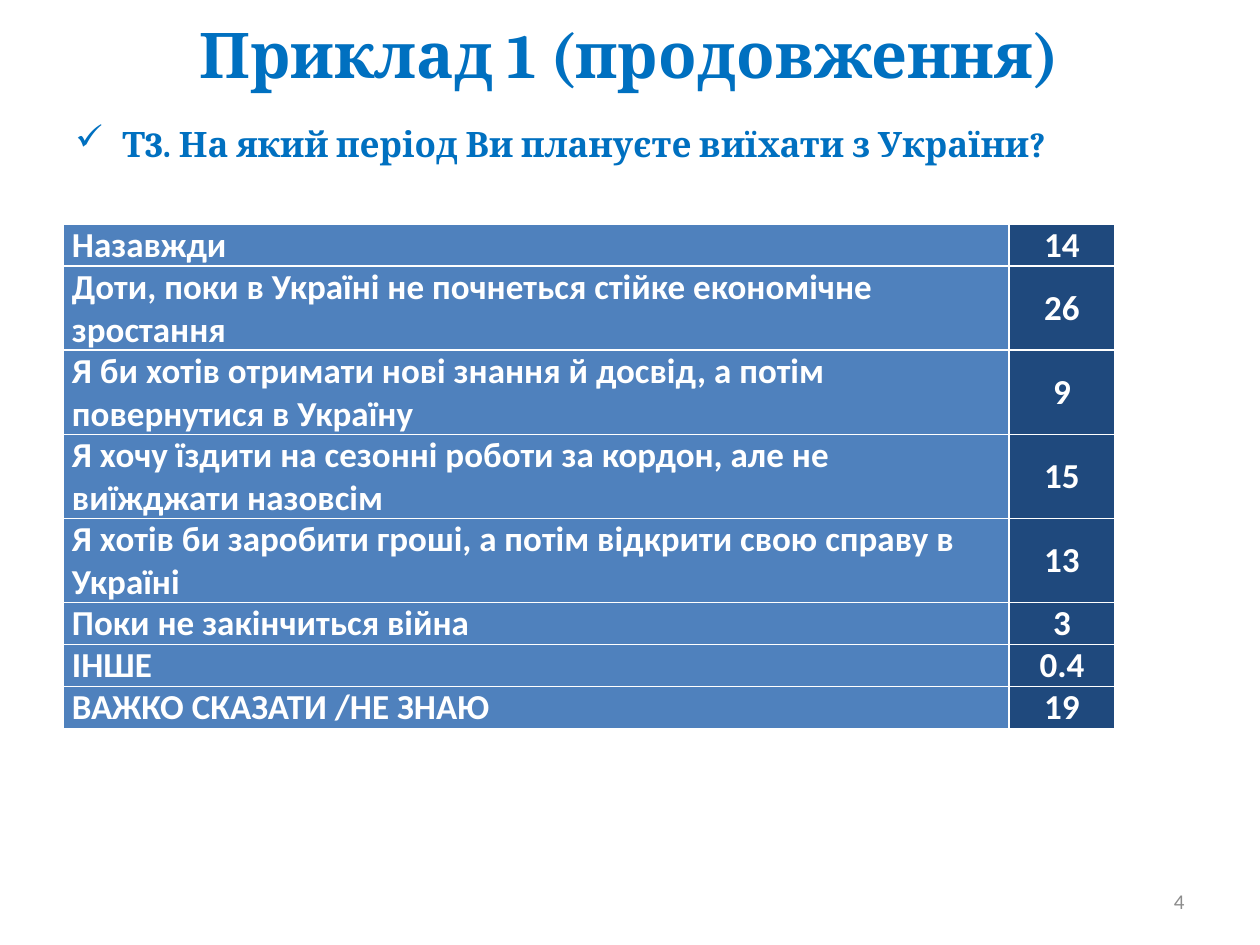
"""Build a slide with a survey question and a table of its answers."""
from lxml import etree
from pptx import Presentation
from pptx.dml.color import RGBColor
from pptx.enum.text import MSO_ANCHOR, PP_ALIGN
from pptx.oxml.ns import qn
from pptx.util import Emu, Pt

LEFT, CENTER, RIGHT = PP_ALIGN.LEFT, PP_ALIGN.CENTER, PP_ALIGN.RIGHT
TOP, MIDDLE = MSO_ANCHOR.TOP, MSO_ANCHOR.MIDDLE

BLUE = RGBColor(0x00, 0x70, 0xC0)
WHITE = RGBColor(0xFF, 0xFF, 0xFF)
GRAY = RGBColor(0x8C, 0x8C, 0x8C)
ANSWER_FILL = RGBColor(0x4F, 0x81, 0xBD)
SHARE_FILL = RGBColor(0x1F, 0x49, 0x7D)

TITLE = "Приклад 1 (продовження)"
QUESTION = "Т3. На який період Ви плануєте виїхати з України?"
PAGE_NUMBER = "4"
ANSWERS = [
    ("Назавжди", "14"),
    ("Доти, поки в Україні не почнеться стійке економічне зростання", "26"),
    ("Я би хотів отримати нові знання й досвід, а потім повернутися в Україну", "9"),
    ("Я хочу їздити на сезонні роботи за кордон, але не виїжджати назовсім", "15"),
    ("Я хотів би заробити гроші, а потім відкрити свою справу в Україні", "13"),
    ("Поки не закінчиться війна", "3"),
    ("ІНШЕ", "0.4"),
    ("ВАЖКО СКАЗАТИ /НЕ ЗНАЮ", "19"),
]
COLUMNS = [
    (946, ANSWER_FILL, LEFT, TOP),
    (106, SHARE_FILL, CENTER, MIDDLE),
]
ROW_HEIGHT = 42
CELL_INSET = 9
BULLET_INDENT = 47


def px(length):
    return Emu(round(length * 914400 / 126))


def write(frame, text, size, font, color, align=LEFT, bold=True):
    para = frame.paragraphs[0]
    para.alignment = align
    span = para.add_run()
    span.text = text
    span.font.size = Pt(size)
    span.font.name = font
    span.font.bold = bold
    span.font.color.rgb = color
    return para


def add_text_box(page, left, top, width, height, anchor):
    box = page.shapes.add_textbox(px(left), px(top), px(width), px(height))
    frame = box.text_frame
    frame.word_wrap = True
    frame.vertical_anchor = anchor
    return frame


def add_title(page):
    title = page.shapes.title
    title.left, title.top, title.width, title.height = px(113), px(0), px(1032), px(106)
    title.text_frame.vertical_anchor = MIDDLE
    write(title.text_frame, TITLE, 36, "Cambria", BLUE, CENTER)


def add_question(page):
    frame = add_text_box(page, 63, 116, 1134, 728, TOP)
    para = write(frame, QUESTION, 20, "Cambria", BLUE)
    properties = para._p.get_or_add_pPr()
    properties.set("marL", str(px(BULLET_INDENT)))
    properties.set("indent", str(-px(BULLET_INDENT)))
    etree.SubElement(properties, qn("a:buChar")).set("char", "✓")


def add_answers(page):
    width = sum(column[0] for column in COLUMNS)
    table = page.shapes.add_table(
        len(ANSWERS), len(COLUMNS), px(63), px(224), px(width), px(ROW_HEIGHT * len(ANSWERS))
    ).table
    table.horz_banding = False
    for column, (column_width, fill, align, anchor) in enumerate(COLUMNS):
        table.columns[column].width = px(column_width)
        for row, answer in enumerate(ANSWERS):
            cell = table.cell(row, column)
            cell.margin_left = cell.margin_right = px(CELL_INSET)
            cell.margin_top = cell.margin_bottom = 0
            cell.vertical_anchor = anchor
            cell.fill.solid()
            cell.fill.fore_color.rgb = fill
            write(cell.text_frame, answer[column], 20, "Calibri", WHITE, align)


def main():
    deck = Presentation()
    deck.slide_width, deck.slide_height = px(1260), px(945)
    page = deck.slides.add_slide(deck.slide_layouts[5])
    add_title(page)
    add_question(page)
    add_answers(page)
    number = add_text_box(page, 903, 876, 294, 50, MIDDLE)
    write(number, PAGE_NUMBER, 12, "Calibri", GRAY, RIGHT, bold=False)
    deck.save("out.pptx")


if __name__ == "__main__":
    main()
